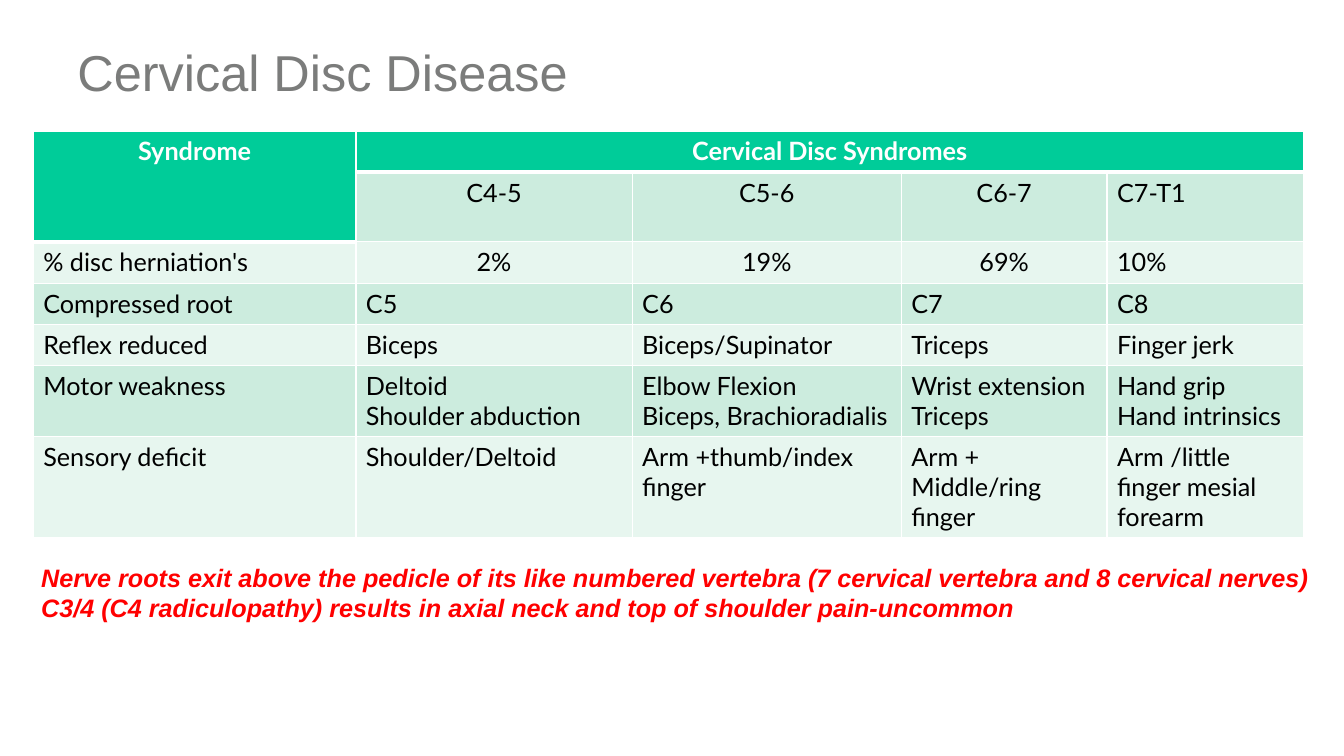
from dataclasses import dataclass

from lxml import etree
from pptx import Presentation
from pptx import util as u
from pptx.dml.color import RGBColor
from pptx.enum import text
from pptx.oxml import ns


@dataclass(frozen=True)
class Theme:
    heading_font: str = "Arial"
    table_font: str = "Lato"
    title_size: int = 36
    body_size: int = 18
    title: str = "7B7C7B"
    note: str = "FF0000"
    header: str = "00CC99"
    header_text: str = "FFFFFF"
    cell_text: str = "000000"
    bands: tuple[str, str] = ("CCECDE", "E7F6EF")
    border: str = "FFFFFF"
    thin: int = 1
    thick: int = 3


@dataclass(frozen=True)
class TextStyle:
    font: str
    size: int
    color: str
    bold: bool = False
    italic: bool = False


@dataclass(frozen=True)
class TextBlock:
    left: float
    top: float
    width: float
    height: float
    content: str
    style: TextStyle
    top_inset: float = 0.05
    line_spacing: float = 1.0


THEME = Theme()
HEADER_STYLE = TextStyle(THEME.table_font, THEME.body_size, THEME.header_text, bold=True)
CELL_STYLE = TextStyle(THEME.table_font, THEME.body_size, THEME.cell_text)

BLOCKS = (
    TextBlock(0.67, 0.3, 11.99, 0.99, "Cervical Disc Disease",
              TextStyle(THEME.heading_font, THEME.title_size, THEME.title),
              top_inset=0.1, line_spacing=1.02),
    TextBlock(0.31, 5.53, 13.03, 1.01,
              "Nerve roots exit above the pedicle of its like numbered vertebra "
              "(7 cervical vertebra and 8 cervical nerves)\n"
              "C3/4 (C4 radiculopathy) results in axial neck and top of shoulder pain-uncommon",
              TextStyle(THEME.heading_font, THEME.body_size, THEME.note, bold=True, italic=True)),
)

COLUMN_WIDTHS = (3.2, 2.74, 2.67, 2.04, 1.95)
ROW_HEIGHTS = (0.41, 0.69, 0.41, 0.41, 0.41, 0.7, 1.0)
SYNDROMES = (
    ("Syndrome", "Cervical Disc Syndromes", "", "", ""),
    ("", "C4-5", "C5-6", "C6-7", "C7-T1"),
    ("% disc herniation's", "2%", "19%", "69%", "10%"),
    ("Compressed root", "C5", "C6", "C7", "C8"),
    ("Reflex reduced", "Biceps", "Biceps/Supinator", "Triceps", "Finger jerk"),
    ("Motor weakness", "Deltoid\nShoulder abduction", "Elbow Flexion\nBiceps, Brachioradialis",
     "Wrist extension\nTriceps", "Hand grip\nHand intrinsics"),
    ("Sensory deficit", "Shoulder/Deltoid", "Arm +thumb/index finger",
     "Arm + Middle/ring finger", "Arm /little finger mesial forearm"),
)


def write(frame, content: str, style: TextStyle, centred: bool = False,
          line_spacing: float = 1.0) -> None:
    frame.text = content
    for paragraph in frame.paragraphs:
        paragraph.alignment = text.PP_ALIGN.CENTER if centred else text.PP_ALIGN.LEFT
        paragraph.line_spacing = line_spacing
        for run in paragraph.runs:
            run.font.name = style.font
            run.font.size = u.Pt(style.size)
            run.font.bold = style.bold
            run.font.italic = style.italic
            run.font.color.rgb = RGBColor.from_string(style.color)


def add_block(slide, block: TextBlock) -> None:
    box = slide.shapes.add_textbox(*map(u.Inches, (block.left, block.top, block.width, block.height)))
    frame = box.text_frame
    frame.word_wrap = True
    frame.margin_top = u.Inches(block.top_inset)
    write(frame, block.content, block.style, line_spacing=block.line_spacing)


def set_borders(cell, top: int, bottom: int) -> None:
    properties = cell._tc.get_or_add_tcPr()
    widths = {"lnL": THEME.thin, "lnR": THEME.thin, "lnT": top, "lnB": bottom}
    for position, (edge, points) in enumerate(widths.items()):
        line = etree.Element(ns.qn(f"a:{edge}"), w=str(u.Pt(points)))
        fill = etree.SubElement(line, ns.qn("a:solidFill"))
        etree.SubElement(fill, ns.qn("a:srgbClr"), val=THEME.border)
        properties.insert(position, line)


def add_syndrome_table(slide) -> None:
    syndromes = slide.shapes.add_table(
        len(ROW_HEIGHTS), len(COLUMN_WIDTHS), u.Inches(0.33), u.Inches(1.3),
        u.Inches(sum(COLUMN_WIDTHS)), u.Inches(sum(ROW_HEIGHTS))).table
    for column, width in zip(syndromes.columns, COLUMN_WIDTHS):
        column.width = u.Inches(width)
    for row, height in zip(syndromes.rows, ROW_HEIGHTS):
        row.height = u.Inches(height)
    syndromes.cell(0, 0).merge(syndromes.cell(1, 0))
    syndromes.cell(0, 1).merge(syndromes.cell(0, len(COLUMN_WIDTHS) - 1))

    for r, entries in enumerate(SYNDROMES):
        for c, entry in enumerate(entries):
            cell = syndromes.cell(r, c)
            header_end = 1 if c == 0 else 0
            in_header = r <= header_end
            cell.fill.solid()
            cell.fill.fore_color.rgb = RGBColor.from_string(
                THEME.header if in_header else THEME.bands[(r + 1) % 2])
            set_borders(cell,
                        top=THEME.thick if r == header_end + 1 else THEME.thin,
                        bottom=THEME.thick if in_header else THEME.thin)
            if entry:
                centred = in_header or (r in (1, 2) and c in (1, 2, 3))
                write(cell.text_frame, entry, HEADER_STYLE if in_header else CELL_STYLE, centred)


def main() -> None:
    deck = Presentation()
    deck.slide_width = u.Inches(13.33)
    deck.slide_height = u.Inches(7.5)
    slide = deck.slides.add_slide(deck.slide_layouts[6])
    for block in BLOCKS:
        add_block(slide, block)
    add_syndrome_table(slide)
    deck.save("out.pptx")


if __name__ == "__main__":
    main()
